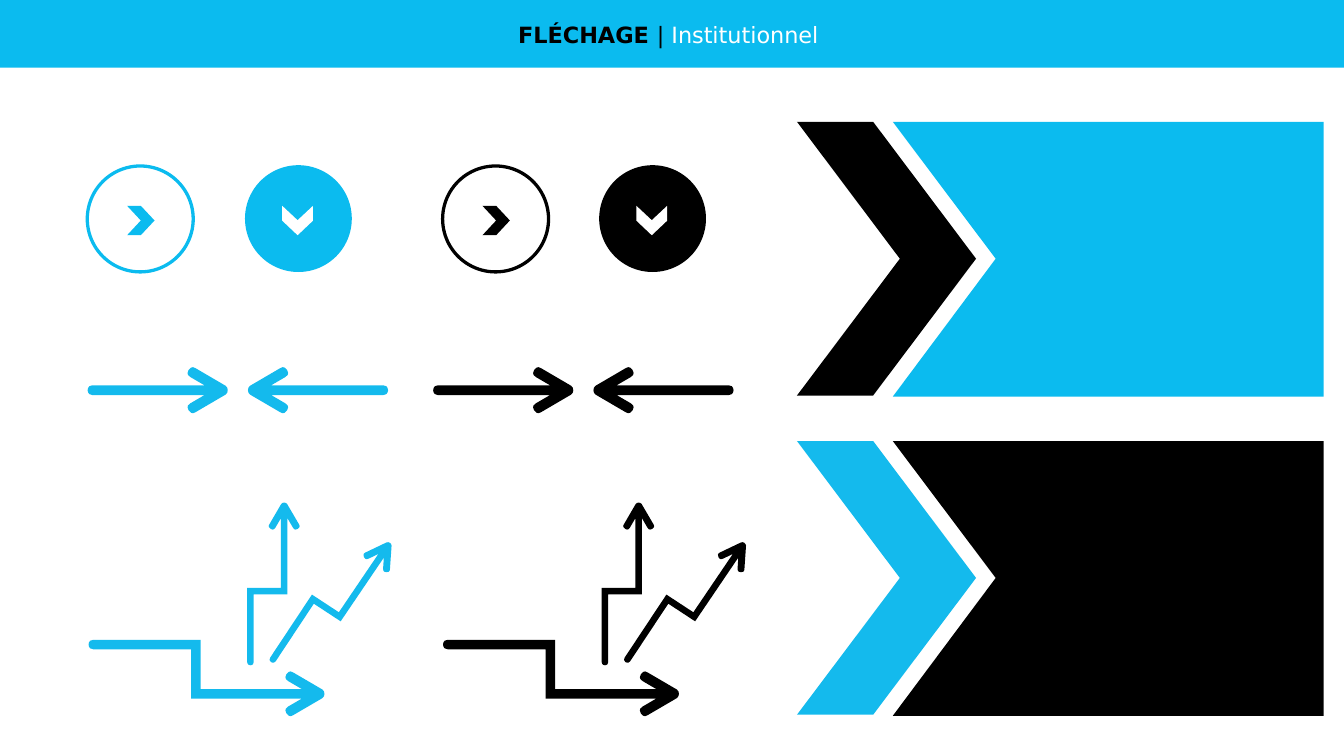
from dataclasses import dataclass

from pptx import Presentation
from pptx.dml.color import RGBColor
from pptx.enum.shapes import MSO_SHAPE as Preset
from pptx.enum.text import MSO_ANCHOR as Anchor, MSO_AUTO_SIZE as AutoSize, PP_ALIGN as Align
from pptx.util import Pt


@dataclass(frozen=True)
class Theme:
    cyan: RGBColor = RGBColor.from_string("0BBBEF")
    arrow_cyan: RGBColor = RGBColor.from_string("14BAED")
    black: RGBColor = RGBColor.from_string("000000")
    white: RGBColor = RGBColor.from_string("FFFFFF")
    font: str = "DejaVu Sans"
    title_size: int = 16


theme = Theme()
presentation = Presentation()
presentation.slide_width, presentation.slide_height = Pt(960), Pt(540)
slide = presentation.slides.add_slide(presentation.slide_layouts[5])
shapes = slide.shapes


def paint(shape, color):
    shape.shadow.inherit = False
    shape.fill.solid()
    shape.fill.fore_color.rgb = color
    shape.line.fill.background()


def draw_outline(points, color):
    """Draw a closed, filled polygon through (x, y) points."""
    corners = [(Pt(x), Pt(y)) for x, y in points]
    builder = shapes.build_freeform(*corners[0])
    builder.add_line_segments(corners[1:], close=True)
    paint(builder.convert_to_shape(), color)


# Header band and title
paint(shapes.add_shape(Preset.RECTANGLE, 0, 0, Pt(960), Pt(48.3)), theme.cyan)
title = shapes.title
shapes.element.append(title.element)  # in front of the band
title.left, title.top, title.width, title.height = 0, 0, Pt(960), Pt(49)
frame = title.text_frame
frame.auto_size = AutoSize.NONE
frame.word_wrap = True
frame.vertical_anchor = Anchor.MIDDLE
paragraph = frame.paragraphs[0]
paragraph.alignment = Align.CENTER
for text, color, bold in [
    ("FLÉCHAGE ", theme.black, True),
    ("| ", theme.black, False),
    ("Institutionnel ", theme.white, False),
]:
    run = paragraph.add_run()
    run.text = text
    run.font.name = theme.font
    run.font.size = Pt(theme.title_size)
    run.font.bold = bold
    run.font.color.rgb = color

# Large chevron banners
for top, chevron_color, block_color in [
    (87, theme.black, theme.cyan),
    (315, theme.arrow_cyan, theme.black),
]:
    middle, bottom = top + 97.8, top + 196.3
    draw_outline([(637.7, top), (711.2, middle), (637.7, bottom),
                  (945.5, bottom), (945.5, top)], block_color)
    bottom -= 0.8
    draw_outline([(569.3, top), (642.8, middle), (569.3, bottom),
                  (623.7, bottom), (697.2, middle), (623.7, top)], chevron_color)

# Round buttons: a ring pointing right and a disc pointing down
for ring_left, disc_left, color in [(61.2, 175, theme.cyan), (315, 428, theme.black)]:
    ring = shapes.add_shape(Preset.DONUT, Pt(ring_left), Pt(117.4), Pt(78), Pt(78))
    ring.adjustments[0] = 0.03
    paint(ring, color)
    x = ring_left + 29.6
    draw_outline([(x, 147), (x + 9.8, 157.5), (x, 168),
                  (x + 9.8, 168), (x + 19.6, 157.5), (x + 9.8, 147)], color)

    paint(shapes.add_shape(Preset.OVAL, Pt(disc_left), Pt(118), Pt(76.3), Pt(76.3)), color)
    x = disc_left + 26.6
    draw_outline([(x, 147), (x + 11, 157.3), (x + 22, 147),
                  (x + 22, 157.6), (x + 11, 168), (x, 157.6)], theme.white)

# Arrows: centre lines as x + y·j, swept by a half thickness.
# Cap and head are half profiles (along + side·j) in half thicknesses.
cap = [0, 0.1 + 0.45j, 0.35 + 0.8j, 1 + 1j]
head = [-4.75 + 1j, -7.6 + 2.66j, -8.1 + 3.1j, -8.2 + 3.5j, -8 + 4.1j,
        -7.5 + 4.6j, -7.1 + 4.7j, -6.6 + 4.5j, -0.43 + 0.9j, -0.1 + 0.5j, 0]
straight_routes = [
    (3.5, [62.6 + 278.7j, 162.7 + 278.7j]),
    (3.5, [277.2 + 278.7j, 177.1 + 278.7j]),
]
bent_routes = [
    (3.4, [63.3 + 460.4j, 140 + 460.4j, 140 + 495.6j, 231.8 + 495.6j]),
    (2.35, [178.9 + 475.2j, 178.9 + 422.3j, 203 + 422.3j, 203 + 359j]),
    (2.35, [193.7 + 473j, 223.5 + 428j, 242.7 + 440.6j, 278.5 + 387.8j]),
]
for routes, black_shift in [(straight_routes, 246.8), (bent_routes, 253.2)]:
    for shift, color in [(0, theme.arrow_cyan), (black_shift, theme.black)]:
        for half, route in routes:
            directions = [(b - a) / abs(b - a) for a, b in zip(route, route[1:])]
            sides = []
            for side in (1, -1):
                edge = []
                for point in cap:
                    profile = complex(point.real, side * point.imag)
                    edge.append(route[0] + half * profile * directions[0])
                for corner, before, after in zip(route[1:], directions, directions[1:]):
                    cosine = (before * after.conjugate()).real
                    edge.append(corner + side * half * 1j * (before + after) / (1 + cosine))
                for point in head:
                    profile = complex(point.real, side * point.imag)
                    edge.append(route[-1] + half * profile * directions[-1])
                sides.append(edge)
            outline = sides[0] + sides[1][-2:0:-1]
            draw_outline([(point.real + shift, point.imag) for point in outline], color)

presentation.save("out.pptx")
